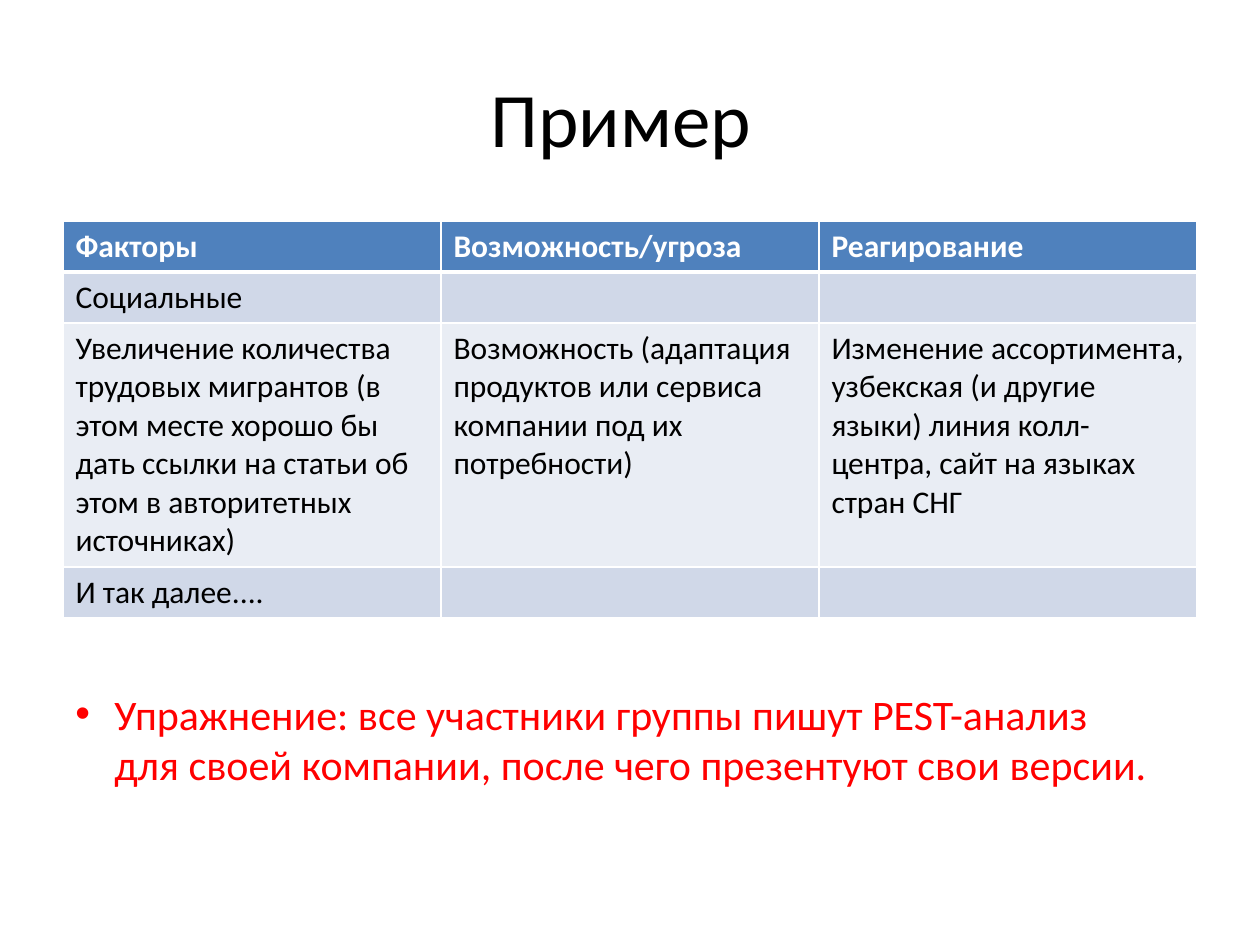
from lxml import etree
from pptx import Presentation
from pptx.dml.color import RGBColor
from pptx.enum.text import MSO_ANCHOR, PP_ALIGN
from pptx.oxml.ns import qn
from pptx.util import Pt

MIDDLE = MSO_ANCHOR.MIDDLE
CENTER = PP_ALIGN.CENTER
PX = 914400 // 126
COLORS = {
    "black": "000000", "white": "FFFFFF", "red": "FF0000",
    "header": "4F81BD", "dark_band": "D0D8E8", "light_band": "E9EDF4",
}


def write(text_frame, text, size, color, bold=False):
    paragraph = text_frame.paragraphs[0]
    run = paragraph.add_run()
    run.text = text
    font_format = {"name": "Calibri", "size": Pt(size), "bold": bold}
    for name, value in font_format.items():
        setattr(run.font, name, value)
    run.font.color.rgb = RGBColor.from_string(COLORS[color])
    return paragraph


def add_borders(cell, bottom_width, top_width):
    properties = cell._tc.get_or_add_tcPr()
    widths = {"a:lnL": 1, "a:lnR": 1, "a:lnT": top_width, "a:lnB": bottom_width}
    for position, (tag, width) in enumerate(widths.items()):
        line = etree.Element(qn(tag), w=str(Pt(width)))
        fill = etree.SubElement(line, qn("a:solidFill"))
        etree.SubElement(fill, qn("a:srgbClr"), val=COLORS["white"])
        properties.insert(position, line)


presentation = Presentation()
presentation.slide_width = 1260 * PX
presentation.slide_height = 945 * PX
slide = presentation.slides.add_slide(presentation.slide_layouts[6])

# Title; the trailing space is part of the centred line
title = slide.shapes.add_textbox(63 * PX, 38 * PX, 1134 * PX, 157 * PX)
title.text_frame.word_wrap = True
title.text_frame.vertical_anchor = MIDDLE
write(title.text_frame, "Пример ", 44, "black").alignment = CENTER

# Table of factors
rows = [
    ("header", 51, ["Факторы", "Возможность/угроза", "Реагирование"]),
    ("dark_band", 51, ["Социальные", "", ""]),
    ("light_band", 244, [
        "Увеличение количества трудовых мигрантов (в этом месте хорошо бы "
        "дать ссылки на статьи об этом в авторитетных источниках)",
        "Возможность (адаптация продуктов или сервиса компании под их потребности)",
        "Изменение ассортимента, узбекская (и другие языки) линия колл-центра, "
        "сайт на языках стран СНГ",
    ]),
    ("dark_band", 51, ["И так далее....", "", ""]),
]
table_height = sum(height for _, height, _ in rows)
table = slide.shapes.add_table(
    len(rows), 3, 63 * PX, 221 * PX, 1134 * PX, table_height * PX).table
for row_index, (band, height, texts) in enumerate(rows):
    table.rows[row_index].height = height * PX
    is_header = row_index == 0
    for column_index, text in enumerate(texts):
        cell = table.cell(row_index, column_index)
        cell.fill.solid()
        cell.fill.fore_color.rgb = RGBColor.from_string(COLORS[band])
        add_borders(cell, 3 if is_header else 1, 3 if row_index == 1 else 1)
        if text:
            write(cell.text_frame, text, 18, "white" if is_header else "black", is_header)

# Exercise with a hanging bullet
exercise = slide.shapes.add_textbox(63 * PX, 682 * PX, 1100 * PX, 152 * PX)
exercise.text_frame.word_wrap = True
paragraph = write(
    exercise.text_frame,
    "Упражнение: все участники группы пишут PEST-анализ для своей компании, "
    "после чего презентуют свои версии.", 24, "red")
properties = paragraph._p.get_or_add_pPr()
properties.set("marL", str(39 * PX))
properties.set("indent", str(-39 * PX))
etree.SubElement(properties, qn("a:buFont"), typeface="Arial")
etree.SubElement(properties, qn("a:buChar"), char="•")

presentation.save("out.pptx")
